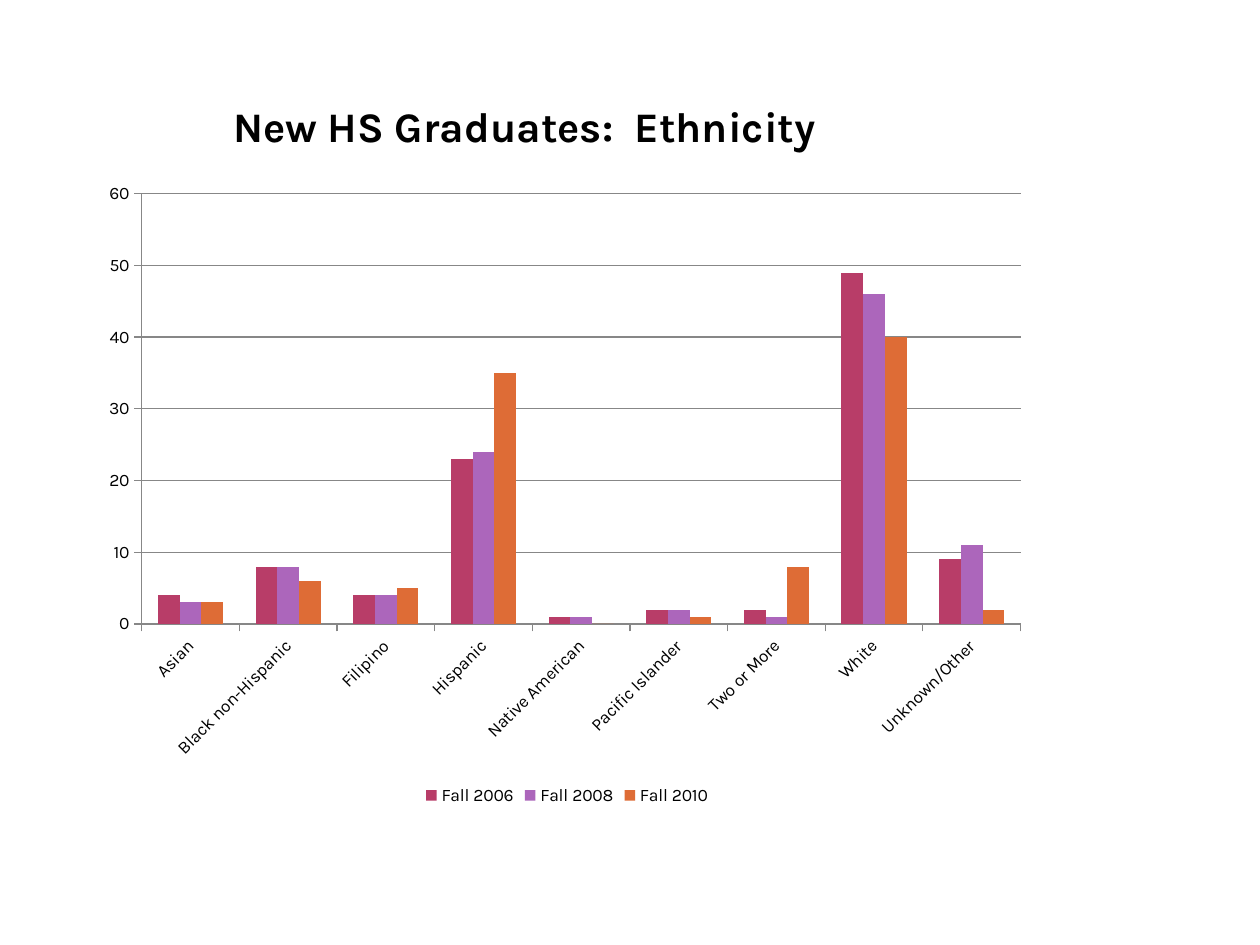
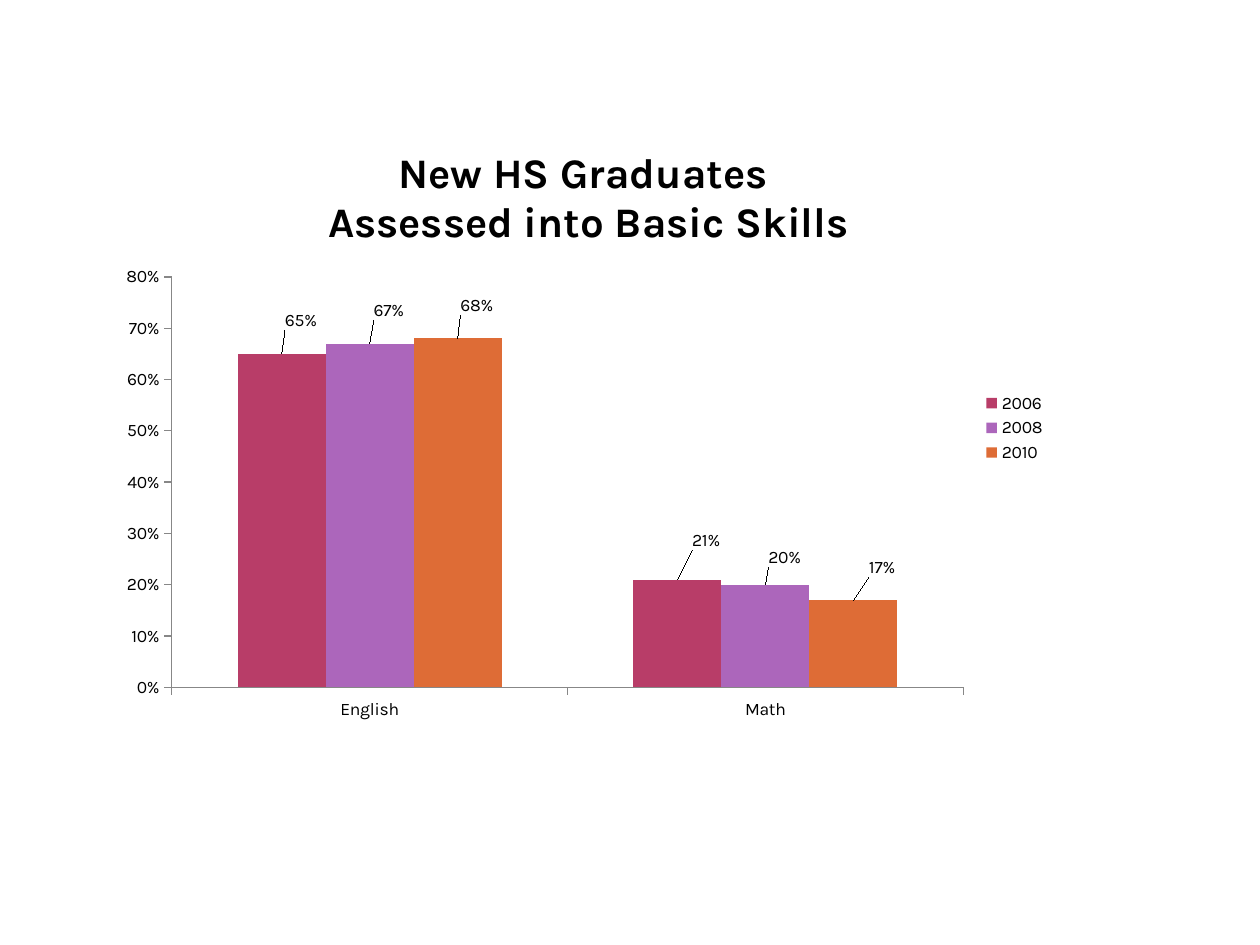
from lxml.etree import SubElement
from pptx import Presentation
from pptx.chart.data import CategoryChartData
from pptx.dml.color import RGBColor
from pptx.enum.chart import (XL_CHART_TYPE as ChartType, XL_LABEL_POSITION as LabelPos,
                             XL_LEGEND_POSITION as LegendPos, XL_TICK_MARK as TickMark)
from pptx.enum.text import MSO_ANCHOR as Anchor, MSO_AUTO_SIZE as AutoSize, PP_ALIGN as Align
from pptx.oxml.ns import qn
from pptx.util import Pt

TITLE_ONLY, BLANK = 5, 6


def color(hex_string):
    return RGBColor.from_string(hex_string)


def format_font(font, name, size, fill, bold=False):
    font.name, font.size, font.bold = name, Pt(size), bold
    font.color.rgb = color(fill)


def put_text(frame, text, align=Align.LEFT, **font_format):
    frame.text = text
    for paragraph in frame.paragraphs:
        paragraph.alignment = align
        for run in paragraph.runs:
            format_font(run.font, **font_format)


def place(element, index, inner=False, **fractions):
    """Give a chart part a manual layout, in fractions of the chart's size."""
    for old in element.findall(qn("c:layout")):
        element.remove(old)
    layout = SubElement(element, qn("c:layout"))
    element.insert(index, layout)
    manual = SubElement(layout, qn("c:manualLayout"))
    if inner:
        SubElement(manual, qn("c:layoutTarget"), val="inner")
    if "w" in fractions or inner is None:
        for mode in ("xMode", "yMode"):
            SubElement(manual, qn(f"c:{mode}"), val="edge")
    for key, value in fractions.items():
        SubElement(manual, qn(f"c:{key}"), val=str(value))


class Deck:
    font = "Karla"
    ink = "000000"
    axis_gray = "878787"
    series_colors = ("B83D68", "AC66BB", "DE6C36")

    def __init__(self):
        self.prs = Presentation()
        self.prs.slide_width, self.prs.slide_height = Pt(720), Pt(540)
        self.title_style = dict(name=self.font, size=24, fill=self.ink, bold=True)
        self.body_style = dict(name=self.font, size=10, fill=self.ink)

    def new_slide(self, layout):
        self.slide = self.prs.slides.add_slide(self.prs.slide_layouts[layout])

    def title(self, text, left, top, width, height):
        heading = self.slide.shapes.title
        heading.left, heading.top = Pt(left), Pt(top)
        heading.width, heading.height = Pt(width), Pt(height)
        frame = heading.text_frame
        frame.word_wrap, frame.auto_size = True, AutoSize.NONE
        frame.vertical_anchor = Anchor.TOP
        put_text(frame, text, **self.title_style)

    def column_chart(self, box, categories, series, legend, plot, top, step,
                     number_format="General", grid=False):
        data = CategoryChartData(number_format=number_format)
        data.categories = categories
        for name, values in series.items():
            data.add_series(name, values)
        chart = self.slide.shapes.add_chart(
            ChartType.COLUMN_CLUSTERED, *map(Pt, box), data).chart
        chart.has_title = False
        format_font(chart.font, **self.body_style)

        columns = chart.plots[0]
        columns.gap_width, columns.overlap = 150, 0
        columns.vary_by_categories = False
        for bars, fill in zip(columns.series, self.series_colors):
            bars.format.fill.solid()
            bars.format.fill.fore_color.rgb = color(fill)
            bars.invert_if_negative = False

        value_axis = chart.value_axis
        value_axis.minimum_scale, value_axis.maximum_scale = 0, top
        value_axis.major_unit = step
        value_axis.tick_labels.number_format = number_format
        value_axis.tick_labels.number_format_is_linked = False
        value_axis.has_major_gridlines = grid
        lines = [value_axis.format.line, chart.category_axis.format.line]
        if grid:
            lines.append(value_axis.major_gridlines.format.line)
        for line in lines:
            line.color.rgb, line.width = color(self.axis_gray), Pt(0.75)
        for axis in (value_axis, chart.category_axis):
            axis.major_tick_mark, axis.minor_tick_mark = TickMark.OUTSIDE, TickMark.NONE
            format_font(axis.tick_labels.font, **self.body_style)

        chart.has_legend = True
        chart.legend.position, chart.legend.include_in_layout = legend, False
        format_font(chart.legend.font, **self.body_style)
        place(chart.plots[0]._element.getparent(), 0, inner=True, **plot)
        return chart

    def slant_categories(self, chart, degrees):
        body = chart.category_axis._element.find(qn("c:txPr")).find(qn("a:bodyPr"))
        body.set("rot", str(-degrees * 60000))
        body.set("vert", "horz")

    def chart_title(self, chart, text, x, y):
        chart.has_title = True
        heading = chart.chart_title
        put_text(heading.text_frame, text, align=Align.CENTER, **self.title_style)
        heading.include_in_layout = False
        place(heading._element, 1, inner=None, x=x, y=y)

    def value_labels(self, chart, number_format, shifts):
        """Label every column, moved by an (x, y) shift per series and category."""
        for bars, bar_shifts in zip(chart.plots[0].series, shifts):
            labels = bars.data_labels
            labels.show_value = True
            labels.number_format, labels.number_format_is_linked = number_format, False
            labels.position = LabelPos.OUTSIDE_END
            format_font(labels.font, **self.body_style)
            for index, (x, y) in enumerate(bar_shifts):
                bars.points[index].data_label.position = LabelPos.OUTSIDE_END
                place(labels._element.findall(qn("c:dLbl"))[index], 1, x=x, y=y)


def ethnicity_slide(deck):
    deck.new_slide(TITLE_ONLY)
    deck.title("New HS Graduates:  Ethnicity", 126, 54, 366, 36)
    chart = deck.column_chart(
        (54, 96, 540, 367),
        ["Asian", "Black non-Hispanic", "Filipino", "Hispanic", "Native American",
         "Pacific Islander", "Two or More", "White", "Unknown/Other"],
        {"Fall 2006": (4, 8, 4, 23, 1, 2, 2, 49, 9),
         "Fall 2008": (3, 8, 4, 24, 1, 2, 1, 46, 11),
         "Fall 2010": (3, 6, 5, 35, 0, 1, 8, 40, 2)},
        LegendPos.BOTTOM, dict(x=0.05, y=0.04, w=0.93, h=0.67), top=60, step=10, grid=True)
    deck.slant_categories(chart, 45)


def basic_skills_slide(deck):
    deck.new_slide(BLANK)
    chart = deck.column_chart(
        (60, 72, 545, 345), ["English", "Math"],
        {"2006": (0.65, 0.21), "2008": (0.67, 0.2), "2010": (0.68, 0.17)},
        LegendPos.RIGHT, dict(x=0.07, y=0.25, w=0.83, h=0.68), top=0.8, step=0.1,
        number_format="0%")
    deck.chart_title(chart, "New HS Graduates \nAssessed into Basic Skills", 0.23, 0.03)
    deck.value_labels(chart, "0%", [[(0.02, -0.03), (0.03, -0.04)],
                                    [(0.02, -0.03), (0.02, -0.02)],
                                    [(0.02, -0.03), (0.03, -0.03)]])


def main():
    deck = Deck()
    ethnicity_slide(deck)
    basic_skills_slide(deck)
    deck.prs.save("out.pptx")


if __name__ == "__main__":
    main()
